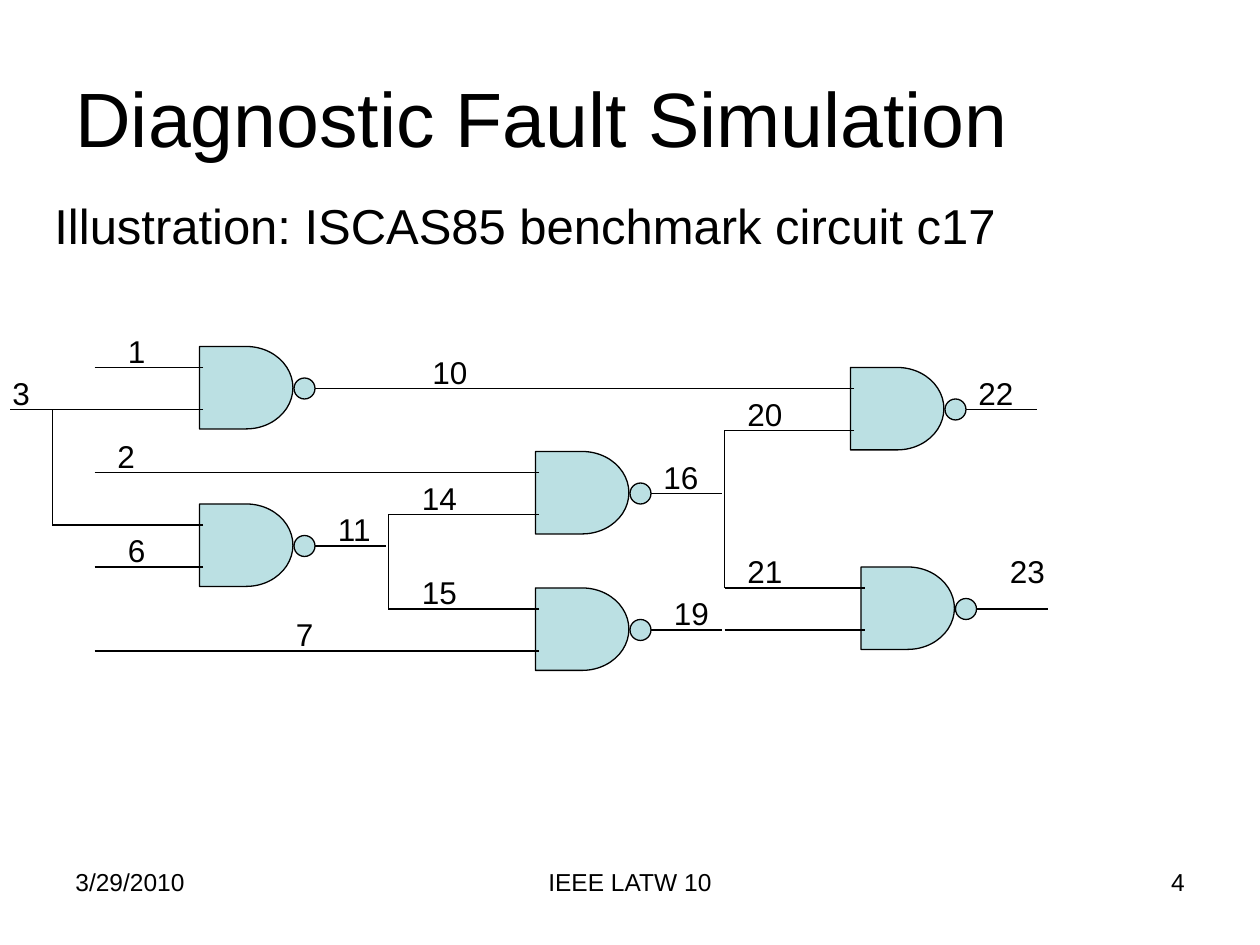
import pptx
import pptx.util
import pptx.dml.color
import pptx.enum.shapes
import pptx.enum.text
import pptx.oxml.ns
from lxml import etree

Align = pptx.enum.text.PP_ALIGN
Anchor = pptx.enum.text.MSO_ANCHOR
Preset = pptx.enum.shapes.MSO_SHAPE

deck = pptx.Presentation()
deck.slide_width = pptx.util.Inches(10)
deck.slide_height = pptx.util.Inches(7.5)
slide = deck.slides.add_slide(deck.slide_layouts[6])

COLUMN = deck.slide_width / 120
ROW = deck.slide_height / 90
BLACK = "000000"
GATE_FILL = "BBE0E3"


def paint(target, color):
    target.rgb = pptx.dml.color.RGBColor.from_string(color)


def write(text, column, row, columns, rows, size=18, align=Align.LEFT,
          anchor=Anchor.TOP, color=BLACK):
    box = slide.shapes.add_textbox(int(column * COLUMN), int(row * ROW),
                                   int(columns * COLUMN), int(rows * ROW))
    frame = box.text_frame
    frame.word_wrap = True
    frame.vertical_anchor = anchor
    paragraph = frame.paragraphs[0]
    paragraph.text = text
    paragraph.alignment = align
    paragraph.font.name = "Arial"
    paragraph.font.size = pptx.util.Pt(size)
    paint(paragraph.font.color, color)


write("Diagnostic Fault Simulation", 6, 3.6, 108, 15, size=44, anchor=Anchor.MIDDLE)
write("Illustration: ISCAS85 benchmark circuit c17", 4, 18, 93, 6.84, size=28)

gates = [(19, 33, 1), (51, 43, 0.75), (19, 48, 1),
         (51, 56, 0.75), (81, 35, 1), (82, 54, 1)]
wires = []
for column, row, output_width in gates:
    wires.append((column + 11, row + 4, column + 17.8, row + 4, output_width))
    for input_row in (row + 2, row + 6):
        wires.append((column + 0.35, input_row, column - 6, input_row, 1))

    body = (Preset.FLOWCHART_DELAY, column, row, 8.9, 7.85)
    bubble = (Preset.OVAL, column + 9, row + 3, 2, 2)
    for preset, left, top, columns, rows in (body, bubble):
        part = slide.shapes.add_shape(preset, int(left * COLUMN), int(top * ROW),
                                      int(columns * COLUMN), int(rows * ROW))
        part.shadow.inherit = False
        part.fill.solid()
        paint(part.fill.fore_color, GATE_FILL)
        paint(part.line.color, BLACK)
        part.line.width = pptx.util.Pt(0.75)

links = [
    (9, 35, 13, 35), (9, 45, 45, 45), (9, 54, 13, 54), (9, 62, 45, 62),
    (1, 39, 5, 39), (5, 39, 16, 39), (5, 39, 5, 50), (5, 50, 13.5, 50),
    (36.8, 37, 75, 37),
    (37, 49, 37, 58), (37, 49, 45, 49), (37, 58, 45, 58),
    (69, 41, 69, 56), (69, 41, 75, 41), (69, 56, 76, 56), (69, 60, 76, 60),
]
wires += [link + (1,) for link in links]

for start_column, start_row, end_column, end_row, width in wires:
    wire = slide.shapes.add_connector(
        pptx.enum.shapes.MSO_CONNECTOR.STRAIGHT,
        int(start_column * COLUMN), int(start_row * ROW),
        int(end_column * COLUMN), int(end_row * ROW))
    paint(wire.line.color, BLACK)
    wire.line.width = pptx.util.Pt(width)
    etree.SubElement(wire.element.spPr, pptx.oxml.ns.qn("a:effectLst"))

net_labels = [
    ("1", 11, 31, 5), ("3", 0, 35, 4), ("2", 10, 41, 5), ("6", 11, 50, 5),
    ("7", 27, 58, 5), ("10", 40, 33, 7), ("11", 31, 48, 7), ("14", 39, 45, 7),
    ("15", 39, 54, 7), ("16", 62, 43, 6), ("19", 63, 56, 6), ("20", 70, 37, 6),
    ("21", 70, 52, 6), ("22", 92, 35, 6), ("23", 95, 52, 6),
]
for net, column, row, columns in net_labels:
    write(net, column, row, columns, 4.8)

footers = [("3/29/2010", 6, 28, Align.LEFT), ("IEEE LATW 10", 41, 38, Align.CENTER),
           ("4", 86, 28, Align.RIGHT)]
for text, column, columns, align in footers:
    write(text, column, 82, columns, 6.25, size=14, align=align)

deck.save("out.pptx")
